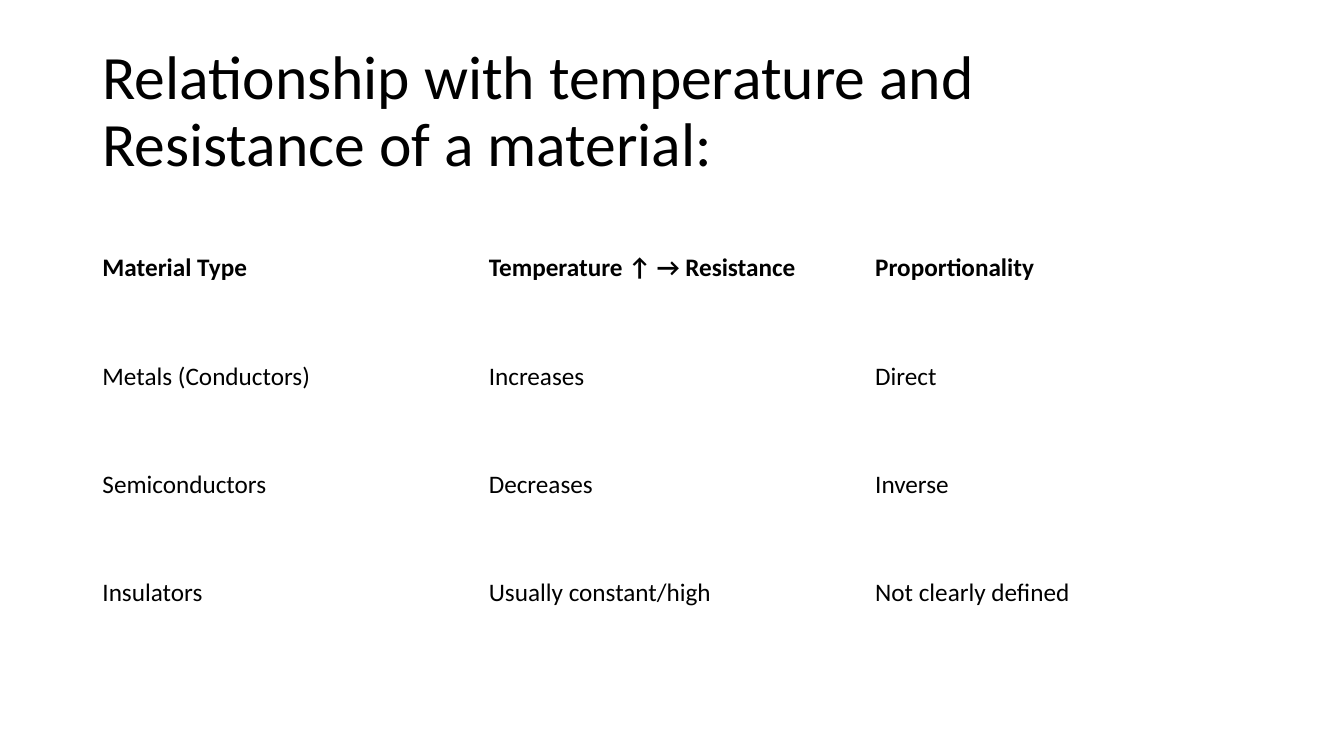
from pptx import Presentation
from pptx.dml.color import RGBColor
from pptx.enum.text import MSO_ANCHOR as Anchor
from pptx.util import Emu, Pt

PX = 9525
BLACK = RGBColor(0x00, 0x00, 0x00)
WHITE = RGBColor(0xFF, 0xFF, 0xFF)
FONT = "Calibri"
TITLE_FORMAT = {"name": FONT, "size": Pt(44), "bold": False}
HEADING_FORMAT = {"name": FONT, "size": Pt(18), "bold": True}
ENTRY_FORMAT = {**HEADING_FORMAT, "bold": False}

TITLE = "Relationship with temperature and Resistance of a material:"
MATERIALS = [
    ("Material Type", "Temperature ↑ → Resistance", "Proportionality"),
    ("Metals (Conductors)", "Increases", "Direct"),
    ("Semiconductors", "Decreases", "Inverse"),
    ("Insulators", "Usually constant/high", "Not clearly defined"),
]


def px(length):
    return Emu(length * PX)


def write(paragraph, wording, text_format):
    run = paragraph.add_run()
    run.text = wording
    for attribute, value in text_format.items():
        setattr(run.font, attribute, value)
    run.font.color.rgb = BLACK


def add_title(slide, left, top, width, height):
    title = slide.shapes.add_textbox(*map(px, (left, top, width, height))).text_frame
    title.word_wrap = True
    title.vertical_anchor = Anchor.MIDDLE
    paragraph = title.paragraphs[0]
    paragraph.line_spacing = 0.9
    write(paragraph, TITLE, TITLE_FORMAT)


def add_materials(slide, left, top, width, height):
    materials = slide.shapes.add_table(
        len(MATERIALS), len(MATERIALS[0]), *map(px, (left, top, width, height))
    ).table
    materials.first_row = False
    materials.horz_banding = False
    for row, entries in enumerate(MATERIALS):
        text_format = ENTRY_FORMAT if row else HEADING_FORMAT
        for column, wording in enumerate(entries):
            cell = materials.cell(row, column)
            cell.fill.background()
            cell.vertical_anchor = Anchor.MIDDLE
            write(cell.text_frame.paragraphs[0], wording, text_format)


def main():
    deck = Presentation()
    deck.slide_width, deck.slide_height = px(1280), px(720)
    slide = deck.slides.add_slide(deck.slide_layouts[6])
    backdrop = slide.background.fill
    backdrop.solid()
    backdrop.fore_color.rgb = WHITE
    add_title(slide, 88, 38, 1104, 139)
    add_materials(slide, 88, 204, 1104, 412)
    deck.save("out.pptx")


if __name__ == "__main__":
    main()
